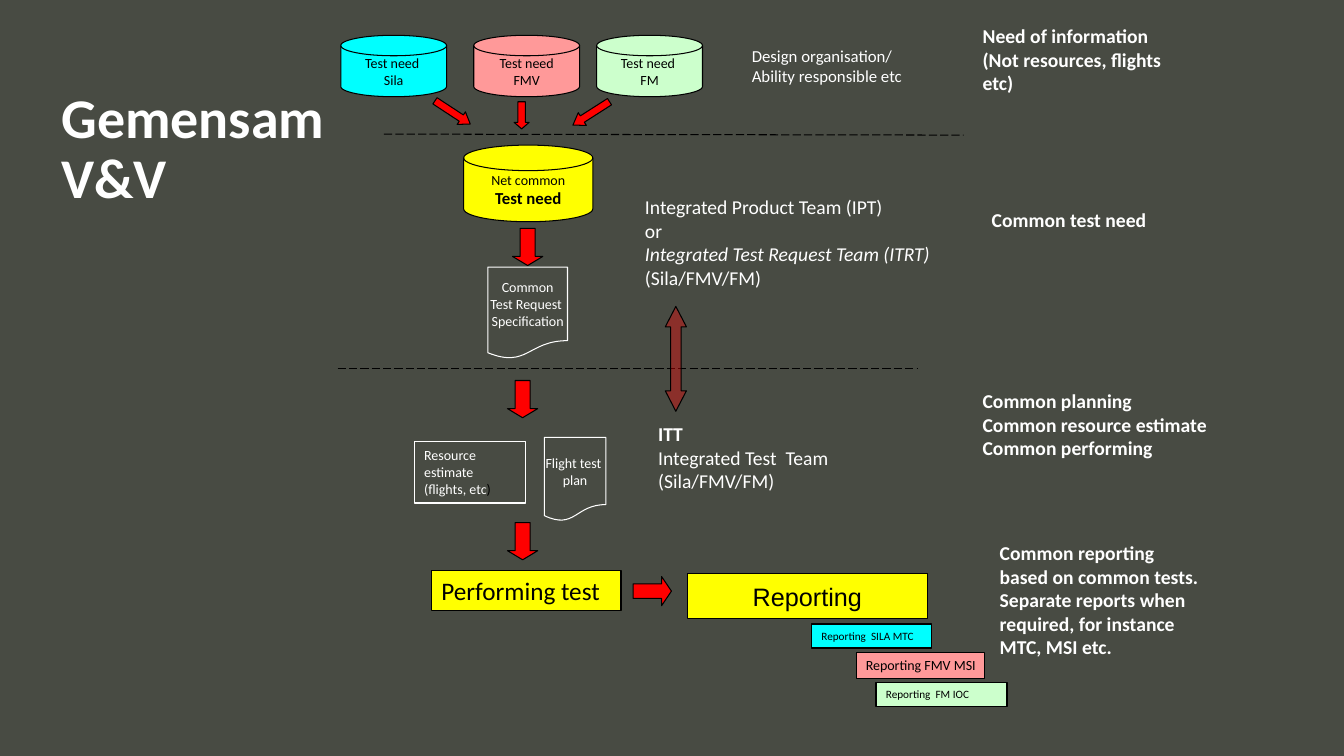
from lxml.etree import SubElement
from pptx import Presentation
from pptx.dml.color import RGBColor
from pptx.enum.dml import MSO_LINE
from pptx.enum.shapes import MSO_CONNECTOR, MSO_SHAPE
from pptx.enum.text import MSO_ANCHOR, MSO_AUTO_SIZE, PP_ALIGN
from pptx.oxml.ns import qn
from pptx.util import Pt

SLATE = RGBColor(0x48, 0x4B, 0x43)
WHITE = RGBColor(0xFF, 0xFF, 0xFF)
BLACK = RGBColor(0, 0, 0)
CYAN = RGBColor(0, 0xFF, 0xFF)
PINK = RGBColor(0xFF, 0x99, 0x99)
GREEN = RGBColor(0xCC, 0xFF, 0xCC)
YELLOW = RGBColor(0xFF, 0xFF, 0)
RED = RGBColor(0xFF, 0, 0)

CYLINDER = MSO_SHAPE.FLOWCHART_MAGNETIC_DISK
DOCUMENT = MSO_SHAPE.FLOWCHART_DOCUMENT
LEFT_EDGE = 240  # shared left edge of the four bands


def write(frame, lines, size, color, name="Calibri", align=PP_ALIGN.LEFT, bold=False):
    """Each line is a text or a list of (text, overrides) spans; "\\n" breaks a line."""
    for index, line in enumerate(lines):
        para = frame.paragraphs[0] if index == 0 else frame.add_paragraph()
        para.alignment = align
        for text, changes in [(line, {})] if isinstance(line, str) else line:
            if text == "\n":
                para.add_line_break()
                continue
            span = para.add_run()
            span.text = text
            span.font.name = name
            span.font.size = Pt(changes.get("size", size))
            span.font.bold = changes.get("bold", bold)
            span.font.italic = changes.get("italic", False)
            span.font.color.rgb = changes.get("color", color)


def add_note(page, left, top, width, height, lines, size=14, bold=False):
    box = page.shapes.add_textbox(Pt(left), Pt(top), Pt(width), Pt(height))
    box.text_frame.word_wrap = True
    box.text_frame.auto_size = MSO_AUTO_SIZE.SHAPE_TO_FIT_TEXT
    write(box.text_frame, lines, size, WHITE, bold=bold)


def add_figure(page, kind, left, top, width, height, fill=None, line=BLACK, weight=0.75):
    figure = page.shapes.add_shape(kind, Pt(left), Pt(top), Pt(width), Pt(height))
    figure.shadow.inherit = False
    if fill is None:
        figure.fill.background()
    else:
        figure.fill.solid()
        figure.fill.fore_color.rgb = fill
    figure.line.color.rgb = line
    figure.line.width = Pt(weight)
    return figure


def add_centred(page, kind, left, top, width, height, lines, fill=None, size=10, name="Calibri"):
    ink = BLACK if fill else WHITE
    figure = add_figure(page, kind, left, top, width, height, fill, ink)
    frame = figure.text_frame
    frame.word_wrap = False
    frame.vertical_anchor = MSO_ANCHOR.MIDDLE
    write(frame, lines, size, ink, name, PP_ALIGN.CENTER)


def add_label(page, left, top, width, height, lines, fill=None, size=10, weight=1.0):
    ink = BLACK if fill else WHITE
    figure = add_figure(page, MSO_SHAPE.RECTANGLE, left, top, width, height, fill, ink, weight)
    frame = figure.text_frame
    frame.word_wrap = True
    frame.auto_size = MSO_AUTO_SIZE.SHAPE_TO_FIT_TEXT
    frame.vertical_anchor = MSO_ANCHOR.TOP
    write(frame, lines, size, ink)


def add_arrow(page, left, top, width=26.6, height=21.6, rotation=90.0, head=0.3):
    arrow = add_figure(page, MSO_SHAPE.RIGHT_ARROW, left, top, width, height, RED)
    arrow.adjustments[0], arrow.adjustments[1] = 0.5, head
    arrow.rotation = rotation


def add_exchange(page, left, top, width, height):
    arrow = add_figure(page, MSO_SHAPE.UP_DOWN_ARROW, left, top, width, height, RED)
    properties = arrow._element.spPr
    # Shaft width and head length
    guides = properties.find(qn("a:prstGeom")).find(qn("a:avLst"))
    guides.clear()
    for name, value in (("adj1", 50000), ("adj2", 96800)):
        SubElement(guides, qn("a:gd"), name=name, fmla=f"val {value}")
    # Translucent fill
    red = properties.find(qn("a:solidFill"))[0]
    SubElement(red, qn("a:alpha"), val="37000")


def add_divider(page, left, top, right, bottom):
    line = page.shapes.add_connector(
        MSO_CONNECTOR.STRAIGHT, Pt(left), Pt(top), Pt(right), Pt(bottom))
    line.line.color.rgb = BLACK
    line.line.width = Pt(0.75)
    line.line.dash_style = MSO_LINE.LONG_DASH
    SubElement(line._element.spPr, qn("a:effectLst"))


def place_title(page, left, top, width, height):
    title = page.shapes.title
    title.left, title.top, title.width, title.height = Pt(left), Pt(top), Pt(width), Pt(height)
    frame = title.text_frame
    frame.word_wrap = True
    frame.auto_size = MSO_AUTO_SIZE.NONE
    frame.vertical_anchor = MSO_ANCHOR.TOP
    write(frame, ["Gemensam", "V&V"], 40, WHITE, bold=True)
    for para in frame.paragraphs:
        para.line_spacing = 0.9
        para.space_before = Pt(0)


def draw_needs(page, left, top):
    # Separate test needs
    for offset, lines, fill in (
        (3.4, ["Test need ", "Sila"], CYAN),
        (98.4, ["Test need", "FMV"], PINK),
        (186.2, ["Test need ", "FM"], GREEN),
    ):
        add_centred(page, CYLINDER, left + offset, top + 15.2, 75.6, 43.9, lines, fill)
    # Arrows into the common need
    add_arrow(page, left + 68.2, top + 64.9, 30.2, 10.8, 33.3, 0.711)
    add_arrow(page, left + 166.8, top + 65.6, 31, 10.8, 147.4, 0.735)
    add_arrow(page, left + 122.9, top + 67, 19.4, 10.8, 90, 0.435)
    add_divider(page, left + 34.3, top + 85.8, left + 448.3, top + 86.5)
    # Notes
    add_note(page, left + 289.9, top + 18.8, 123.8, 37.4,
             ["Design organisation/", "Ability responsible etc"], size=12)
    add_note(page, left + 454.8, top + 3.7, 158.4, 77.8,
             [[("Need of information ", {}), ("\n", {}),
               ("(Not resources, flights etc)", {})]], bold=True)


def draw_common_need(page, left, top):
    # Common need and its specification
    add_centred(page, CYLINDER, left + 91.2, top + 3.7, 92.2, 54.7,
                ["Net common", [("Test need", {"size": 12, "bold": True})]], YELLOW)
    add_arrow(page, left + 123.6, top + 65.6)
    add_centred(page, DOCUMENT, left + 108.5, top + 90.8, 56.9, 65.5,
                ["Common", "Test Request ", "Specification"])
    add_divider(page, left + 1.2, top + 163.5, left + 415.9, top + 163.5)
    # Responsible team
    add_note(page, left + 213.6, top + 35.8, 222.5, 78.5,
             ["Integrated Product Team (IPT)", "or",
              [("Integrated Test Request Team (ITRT)", {"italic": True})], "(Sila/FMV/FM)"])
    add_note(page, left + 461.3, top + 44.7, 158.4, 42.5, ["Common test need"], bold=True)
    # Exchange between the teams
    add_exchange(page, left + 235.2, top + 118.9, 15.1, 74.9)


def draw_planning(page, left, top):
    add_arrow(page, left + 120, top + 4.3)
    # Planning documents
    add_label(page, left + 55.9, top + 45.4, 79.2, 43.9,
              ["Resource estimate", [("(flights, etc", {}), (")", {"color": BLACK})]], weight=0.75)
    add_centred(page, DOCUMENT, left + 148.8, top + 42.5, 43.9, 59.8, ["Flight test ", "plan"])
    # Notes
    add_note(page, left + 223, top + 28.1, 139, 60.5,
             [[("ITT", {"bold": True})], "Integrated Test  Team", "(Sila/FMV/FM)"])
    add_note(page, left + 454.8, top + 4.3, 198.7, 77.8,
             ["Common planning", "Common resource estimate", "Common performing"], bold=True)


def draw_reporting(page, left, top):
    # Performing and common reporting
    add_arrow(page, left + 120, top + 5.8)
    add_label(page, left + 68.2, top + 37.5, 135.4, 28.8, ["Performing test"], YELLOW, 18)
    add_arrow(page, left + 212.2, top + 41.8, 27.4, 20.9, 0, 0.338)
    add_centred(page, MSO_SHAPE.RECTANGLE, left + 251, top + 39.7, 171.4, 32.4,
                ["Reporting"], YELLOW, 18, "Arial")
    # Separate reports
    add_label(page, left + 339.6, top + 75.7, 85.7, 17.3, ["Reporting  SILA MTC"], CYAN, 8)
    add_centred(page, MSO_SHAPE.RECTANGLE, left + 372, top + 95.8, 91.4, 18.7,
                ["Reporting FMV MSI"], PINK)
    add_label(page, left + 385.7, top + 117.4, 93.6, 17.3, ["Reporting  FM IOC"], GREEN, 8)
    add_note(page, left + 467, top + 13, 159.8, 113,
             ["Common reporting based on common tests.  Separate reports when required, "
              "for instance MTC, MSI etc."], bold=True)


def main():
    deck = Presentation()
    deck.slide_width, deck.slide_height = Pt(960), Pt(540)
    page = deck.slides.add_slide(deck.slide_layouts[5])
    page.background.fill.solid()
    page.background.fill.fore_color.rgb = SLATE
    place_title(page, 36.7, 60.5, 823, 69)
    draw_needs(page, LEFT_EDGE, 10)
    draw_common_need(page, LEFT_EDGE, 100)
    draw_planning(page, LEFT_EDGE, 270)
    draw_reporting(page, LEFT_EDGE, 370)
    deck.save("out.pptx")


if __name__ == "__main__":
    main()
